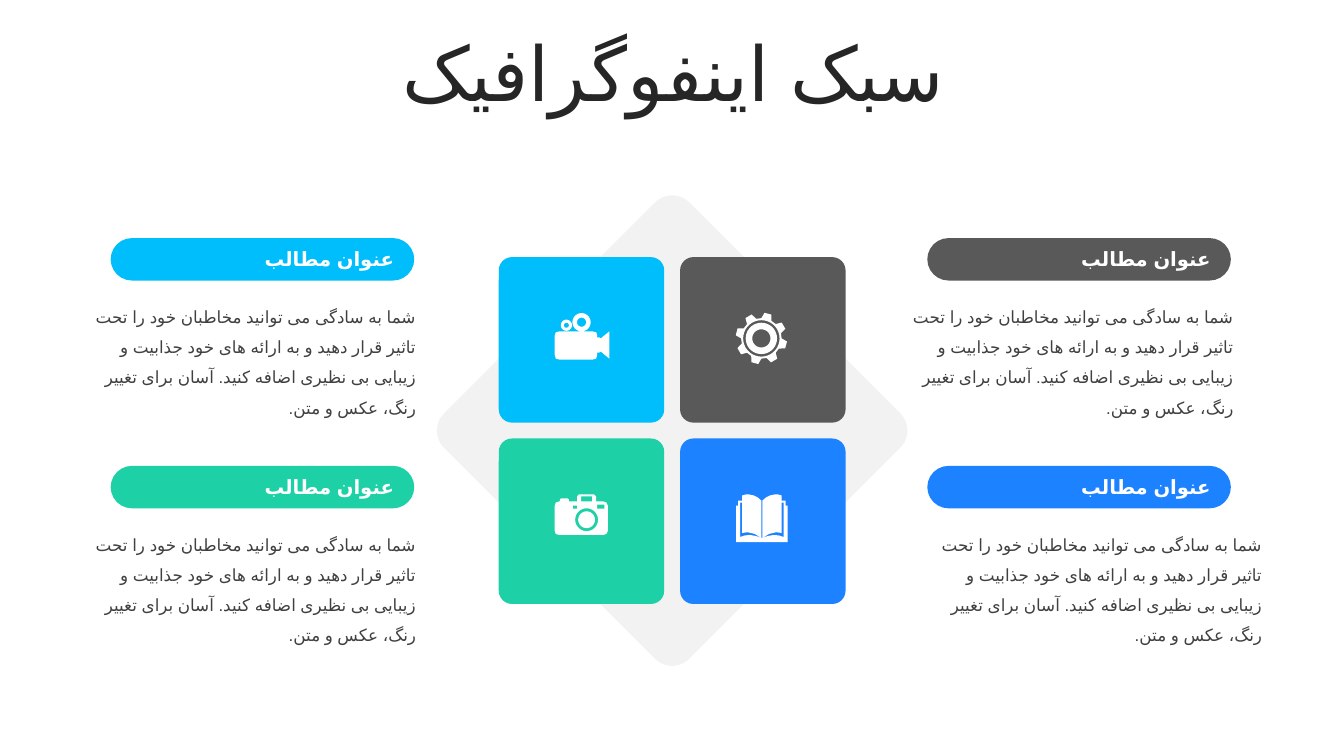
"""Build an infographic slide with four icon cards and four titled texts."""
from dataclasses import dataclass
from math import cos, radians, sin
from typing import Any

from lxml import etree
from pptx import Presentation
from pptx.dml.color import RGBColor
from pptx.enum.shapes import MSO_SHAPE
from pptx.enum.text import MSO_ANCHOR, MSO_AUTO_SIZE, PP_ALIGN
from pptx.oxml.ns import qn
from pptx.util import Cm, Pt

ROUNDED = MSO_SHAPE.ROUNDED_RECTANGLE
CENTER, RIGHT = PP_ALIGN.CENTER, PP_ALIGN.RIGHT
MIDDLE, TOP = MSO_ANCHOR.MIDDLE, MSO_ANCHOR.TOP
FIXED, GROW = MSO_AUTO_SIZE.NONE, MSO_AUTO_SIZE.SHAPE_TO_FIT_TEXT

Contour = list[tuple[float, float]]


@dataclass(frozen=True)
class Theme:
    font: str = "Arial"
    language: str = "fa-IR"
    title_size: int = 54
    heading_size: int = 14
    body_size: int = 12
    title_ink: str = "262626"
    body_ink: str = "404040"
    white: str = "FFFFFF"
    diamond: str = "F2F2F2"
    gray: str = "595959"
    blue: str = "1C82FF"
    cyan: str = "00BDFB"
    green: str = "1ED0A6"


@dataclass(frozen=True)
class Box:
    left: float
    top: float
    width: float
    height: float

    def lengths(self) -> tuple[Cm, Cm, Cm, Cm]:
        return Cm(self.left), Cm(self.top), Cm(self.width), Cm(self.height)


@dataclass(frozen=True)
class TextStyle:
    size: int
    color: str
    paragraph: dict[str, Any]
    frame: dict[str, Any]
    bold: bool = False


@dataclass(frozen=True)
class Topic:
    color: str
    column: int
    row: int
    pill_left: float
    body_left: float
    body_width: float
    icon: list[Contour]


THEME = Theme()
TITLE = TextStyle(
    THEME.title_size, THEME.title_ink,
    {"alignment": CENTER, "line_spacing": 0.9, "space_before": Pt(10)},
    {"vertical_anchor": MIDDLE, "auto_size": FIXED, "word_wrap": True})
BOX_FRAME = {"vertical_anchor": TOP, "auto_size": GROW, "word_wrap": True}
HEADING = TextStyle(THEME.heading_size, THEME.white, {"alignment": RIGHT}, BOX_FRAME, True)
BODY = TextStyle(THEME.body_size, THEME.body_ink,
                 {"alignment": RIGHT, "line_spacing": 1.5}, BOX_FRAME)

TITLE_TEXT = "سبک اینفوگرافیک"
HEADING_TEXT = "عنوان مطالب"
BODY_TEXT = ("شما به سادگی می توانید مخاطبان خود را تحت تاثیر قرار دهید و به ارائه های "
             "خود جذابیت و زیبایی بی نظیری اضافه کنید. آسان برای تغییر رنگ، عکس و متن.")

CARDS_LEFT, CARDS_TOP, CARD_SIDE, CARD_PITCH = 12.57, 6.48, 4.17, 4.57
DIAMOND_SIDE = CARD_PITCH + CARD_SIDE
PANEL_TOP, PANEL_PITCH = 6.0, 5.74
ICON_INSET, ICON_STEP = 1.41, Cm(0.03) * 0.85


def circle(x: float, y: float, radius: float) -> Contour:
    return [(x + radius * cos(radians(a)), y + radius * sin(radians(a)))
            for a in range(0, 360, 10)]


def rectangle(left: float, top: float, right: float, bottom: float) -> Contour:
    return [(left, top), (right, top), (right, bottom), (left, bottom)]


def gear() -> list[Contour]:
    center, teeth = 25, 8
    tooth = [(-15, 20), (-8, 25.5), (8, 25.5), (15, 20)]
    rim = [(center + radius * cos(radians(angle)), center + radius * sin(radians(angle)))
           for index in range(teeth)
           for angle, radius in ((index * 360 / teeth - 75 + turn, reach)
                                 for turn, reach in tooth)]
    return [rim] + [circle(center, center, radius) for radius in (18, 15.5, 9)]


def book() -> list[Contour]:
    spine = 25.5
    cover = [(0.5, 6), (4, 3), (8, 1), (12.5, 0), (16, 0), (19.5, 1), (19.5, 6), (23.5, 6),
             (23.5, 11), (25.5, 11), (25.5, 47), (0, 47), (0, 43), (0.5, 43)]
    page_edge = [(0.5, 43), (6, 41), (12, 40), (17, 40.5), (21.5, 42), (21.5, 8),
                 (19.5, 8), (19.5, 38), (14, 37.3), (7, 39)]
    return [[(spine + side * x, y) for x, y in half]
            for side in (-1, 1) for half in (cover, page_edge)]


def photo_camera() -> list[Contour]:
    case = [(24, 0), (39, 0), (41, 2), (41, 7), (48, 7), (51, 8), (52.5, 11), (52.5, 36),
            (51, 39), (48, 40), (4, 40), (1, 39), (0, 36), (0, 11), (1, 8), (4, 7), (5, 7),
            (5, 5), (6, 4), (13, 4), (14, 5), (14, 7), (22, 7), (22, 2)]
    return [case, circle(31.5, 25, 11.3), circle(31.5, 25, 8.3), rectangle(18, 11, 22, 14),
            rectangle(42, 10, 49, 14), rectangle(26, 2, 37, 7)]


def video_camera() -> list[Contour]:
    case = [(5, 18), (37, 18), (41, 19), (42, 22), (42, 24), (44, 24), (45.5, 25), (54, 18),
            (54, 45), (45.5, 38), (44, 39), (42, 39), (42, 41), (41, 45), (37, 46), (5, 46),
            (1, 45), (0, 41), (0, 22), (1, 19)]
    reels = [(11.5, 12, 5.5), (11.5, 12, 2.5), (26.5, 9, 9), (26.5, 9, 4.5)]
    return [case] + [circle(*reel) for reel in reels]


TOPICS = [
    Topic(THEME.gray, 1, 0, 23.37, 22.73, 8.61, gear()),
    Topic(THEME.blue, 1, 1, 23.37, 23.04, 9.02, book()),
    Topic(THEME.cyan, 0, 0, 2.79, 1.8, 8.94, video_camera()),
    Topic(THEME.green, 0, 1, 2.79, 1.8, 8.94, photo_camera()),
]


def paint(shape: Any, color: str) -> None:
    shape.shadow.inherit = False
    shape.fill.solid()
    shape.fill.fore_color.rgb = RGBColor.from_string(color)
    shape.line.fill.background()


def add_rounded(slide: Any, box: Box, color: str, corner: float, rotation: float = 0) -> None:
    shape = slide.shapes.add_shape(ROUNDED, *box.lengths())
    shape.adjustments[0] = corner
    shape.rotation = rotation
    paint(shape, color)


def write(holder: Any, text: str, style: TextStyle) -> None:
    frame = holder.text_frame
    paragraph = frame.paragraphs[0]
    run = paragraph.add_run()
    run.text = text
    font = {"name": THEME.font, "size": Pt(style.size), "bold": style.bold}
    for target, values in ((frame, style.frame), (paragraph, style.paragraph), (run.font, font)):
        for name, value in values.items():
            setattr(target, name, value)
    run.font.color.rgb = RGBColor.from_string(style.color)
    paragraph._p.get_or_add_pPr().set("rtl", "1")
    properties = run._r.get_or_add_rPr()
    properties.set("lang", THEME.language)
    etree.SubElement(properties, qn("a:cs"), typeface=THEME.font)


def add_text(slide: Any, box: Box, text: str, style: TextStyle) -> None:
    write(slide.shapes.add_textbox(*box.lengths()), text, style)


def add_icon(slide: Any, left: float, top: float, contours: list[Contour]) -> None:
    outlines = [[(x * ICON_STEP, y * ICON_STEP) for x, y in contour] for contour in contours]
    builder = slide.shapes.build_freeform(*outlines[0][0])
    for outline in outlines:
        builder.move_to(*outline[0])
        builder.add_line_segments(outline[1:], close=True)
    paint(builder.convert_to_shape(Cm(left), Cm(top)), THEME.white)


def add_topic(slide: Any, topic: Topic) -> None:
    left = CARDS_LEFT + topic.column * CARD_PITCH
    top = CARDS_TOP + topic.row * CARD_PITCH
    add_rounded(slide, Box(left, top, CARD_SIDE, CARD_SIDE), topic.color, 0.08)
    add_icon(slide, left + ICON_INSET, top + ICON_INSET, topic.icon)
    panel_top = PANEL_TOP + topic.row * PANEL_PITCH
    add_rounded(slide, Box(topic.pill_left, panel_top, 7.65, 1.07), topic.color, 0.5)
    add_text(slide, Box(topic.body_left, panel_top + 1.35, topic.body_width, 2.49),
             BODY_TEXT, BODY)
    add_text(slide, Box(topic.pill_left + 0.23, panel_top + 0.1, 7.16, 0.86),
             HEADING_TEXT, HEADING)


def main() -> None:
    deck = Presentation()
    deck.slide_width, deck.slide_height = Cm(33.87), Cm(19.05)
    slide = deck.slides.add_slide(deck.slide_layouts[5])
    title = slide.shapes.title
    title.left, title.top, title.width, title.height = Box(0.89, 0.94, 32.16, 2.01).lengths()
    write(title, TITLE_TEXT, TITLE)
    add_rounded(slide, Box(CARDS_LEFT, CARDS_TOP, DIAMOND_SIDE, DIAMOND_SIDE),
                THEME.diamond, 0.07, 315)
    for topic in TOPICS:
        add_topic(slide, topic)
    deck.save("out.pptx")


if __name__ == "__main__":
    main()
